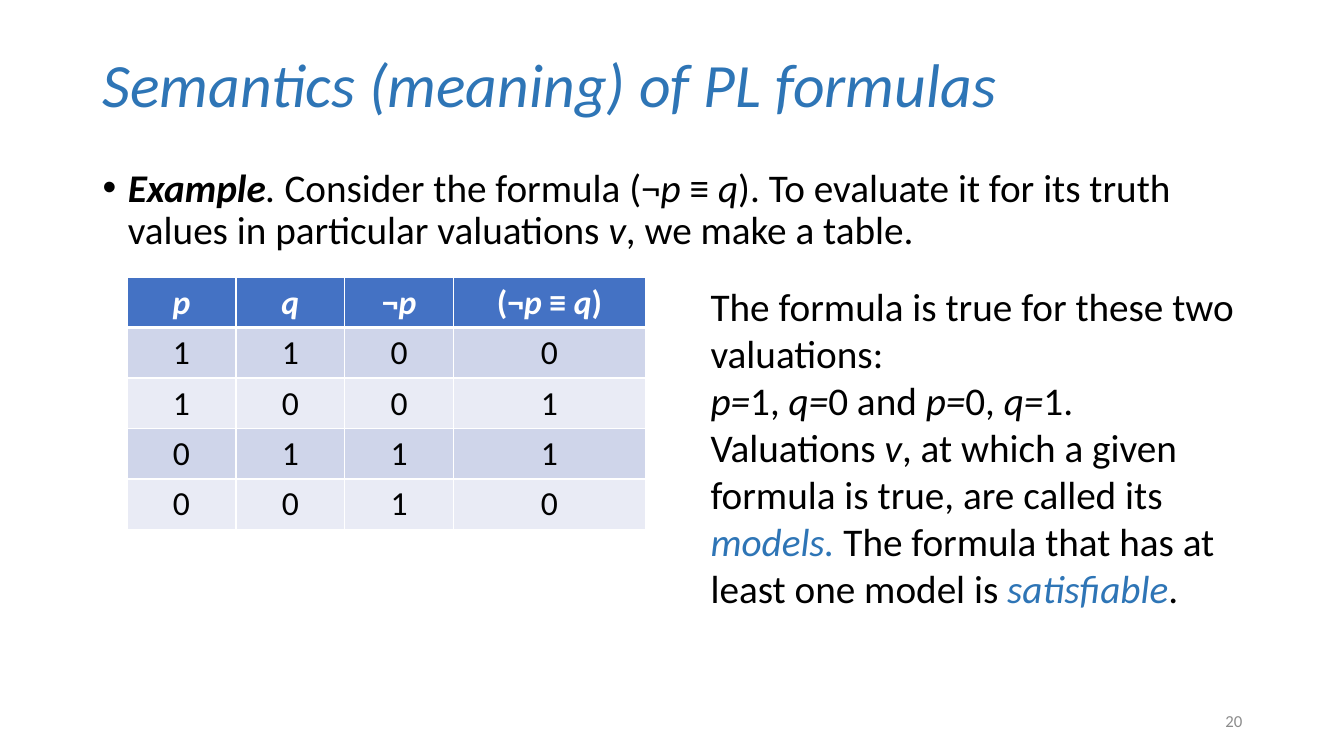
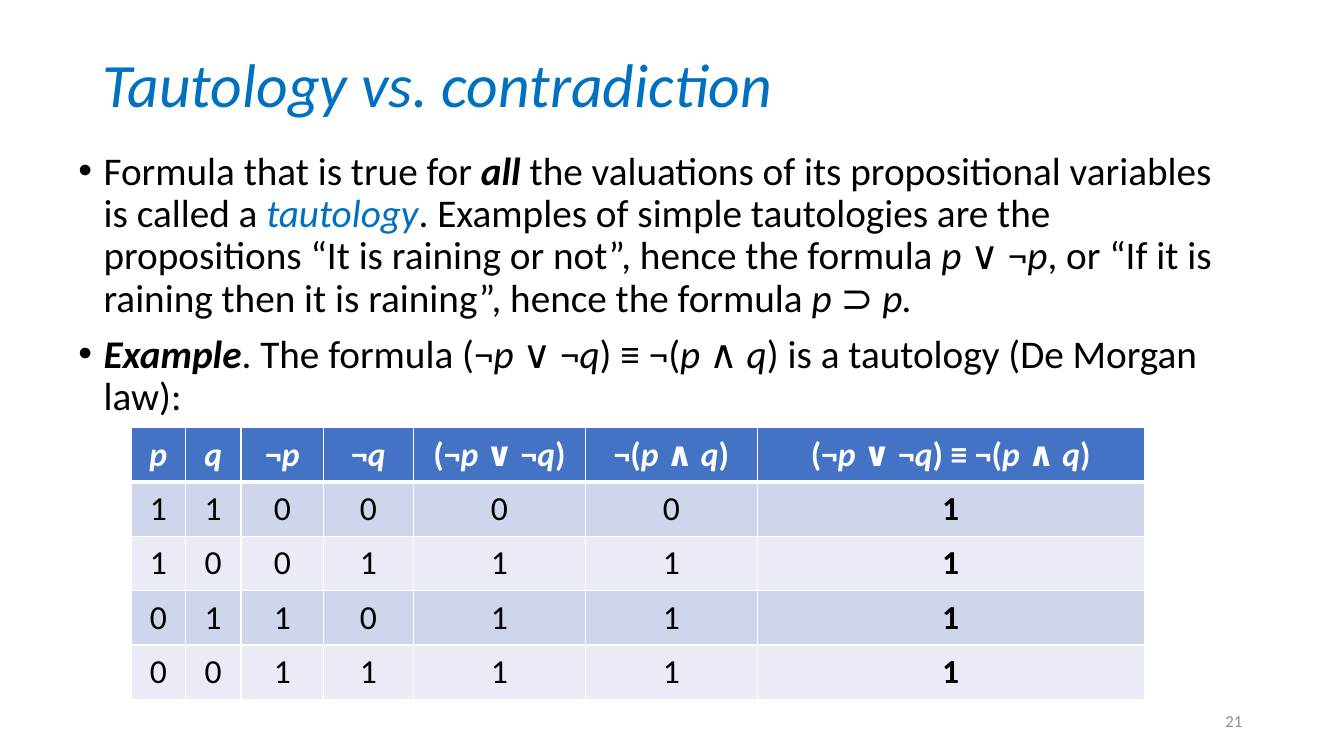
from dataclasses import dataclass

from lxml.etree import SubElement
from pptx import Presentation
from pptx.dml.color import RGBColor
from pptx.enum.text import MSO_ANCHOR, PP_ALIGN
from pptx.oxml.ns import qn
from pptx.util import Inches, Pt


@dataclass(frozen=True)
class Theme:
    font: str = "Calibri"
    text: str = "000000"
    white: str = "FFFFFF"
    muted: str = "8C8C8C"
    header: str = "4472C4"
    bands: tuple = ("CFD5EA", "E9EBF5")
    title_size: int = 44
    body_size: int = 28
    table_size: int = 24
    number_size: int = 12
    line_spacing: float = 0.9
    paragraph_gap: int = 10
    indent: float = 0.25
    border: int = 1
    header_border: int = 3


THEME = Theme()
TITLE_AREA = (0.92, 0.4, 11.5, 0.94)
NUMBER_AREA = (9.42, 6.95, 3, 0.4)

# Inline marks: _italic_, *bold*, ^accent colour^
PAGES = [
    {
        "title": "Semantics (meaning) of PL formulas",
        "number": "20",
        "accent": "2E75B6",
        "bullets": [
            "_*Example*. _Consider the formula (¬_p _≡ _q_). To evaluate it for its truth "
            "values in particular valuations _v_, we make a table.",
        ],
        "bullet_area": (0.92, 1.62, 11.5, 5.14),
        "table": {
            "header": ["_p_", "_q_", "¬_p_", "(¬_p _≡ _q_)"],
            "rows": ["1100", "1001", "0111", "0010"],
            "left": 1.26, "top": 2.75, "row_height": 0.5,
            "widths": [1.08, 1.08, 1.08, 1.9],
            "bold_columns": [],
        },
        "comment": [
            "The formula is true for these two valuations:",
            "_p=_1, _q=_0 and _p=_0, _q=_1.",
            "Valuations _v_, at which a given formula is true, are called its "
            "_^models. ^_The formula that has at least one model is _^satisfiable^_.",
        ],
        "comment_area": (6.95, 2.75, 5.46, 3.4),
    },
    {
        "title": "Tautology vs. contradiction",
        "number": "21",
        "accent": "0070C0",
        "bullets": [
            "Formula that is true for _*all*_ the valuations of its propositional variables "
            "is called a _^tautology^_. Examples of simple tautologies are the propositions "
            "“It is raining or not”, hence the formula _p _∨ ¬_p_, or “If it is raining "
            "then it is raining”, hence the formula _p _⊃ _p._",
            "_*Example*_. The formula (¬_p _∨ ¬_q_) ≡ ¬(_p _∧ _q_) is a tautology "
            "(De Morgan law):",
        ],
        "bullet_area": (0.68, 1.45, 11.74, 5.78),
        "table": {
            "header": ["_p_", "_q_", "¬_p_", "¬_q_", "(¬_p _∨ ¬_q_)", "¬(_p _∧ _q_)",
                       "(¬_p _∨ ¬_q_) ≡ ¬(_p _∧ _q_)"],
            "rows": ["1100001", "1001111", "0110111", "0011111"],
            "left": 1.3, "top": 4.24, "row_height": 0.54,
            "widths": [0.54, 0.55, 0.82, 0.89, 1.71, 1.7, 3.84],
            "bold_columns": [6],
        },
    },
]


def split_marks(text):
    """Yield (piece, active marks) for a marked-up string."""
    active, piece = set(), ""
    for letter in text:
        if letter not in "_*^":
            piece += letter
            continue
        if piece:
            yield piece, frozenset(active)
        piece = ""
        active ^= {letter}
    if piece:
        yield piece, frozenset(active)


def set_bullet(para):
    properties = para._p.get_or_add_pPr()
    properties.set("marL", str(Inches(THEME.indent)))
    properties.set("indent", str(-Inches(THEME.indent)))
    SubElement(properties, qn("a:buFont")).set("typeface", "Arial")
    SubElement(properties, qn("a:buChar")).set("char", "•")


def write(frame, paragraphs, size=THEME.body_size, color=THEME.text, accent=THEME.text,
          bold=False, italic=False, align=PP_ALIGN.LEFT, anchor=MSO_ANCHOR.TOP,
          line_spacing=None, space_before=0, bullet=False):
    frame.word_wrap = True
    frame.vertical_anchor = anchor
    for index, text in enumerate(paragraphs):
        para = frame.add_paragraph() if index else frame.paragraphs[0]
        para.alignment = align
        para.space_before = Pt(space_before)
        if line_spacing:
            para.line_spacing = line_spacing
        if bullet:
            set_bullet(para)
        for piece, marks in split_marks(text):
            span = para.add_run()
            span.text = piece
            span.font.name = THEME.font
            span.font.size = Pt(size)
            span.font.bold = bold or "*" in marks
            span.font.italic = italic or "_" in marks
            span.font.color.rgb = RGBColor.from_string(accent if "^" in marks else color)


def add_text(page, area, paragraphs, **text_format):
    box = page.shapes.add_textbox(*map(Inches, area))
    write(box.text_frame, paragraphs, **text_format)


def style_cell(cell, fill, top, bottom):
    """Draw white borders (widths in points) and fill the cell."""
    properties = cell._tc.get_or_add_tcPr()
    widths = {"a:lnL": THEME.border, "a:lnR": THEME.border, "a:lnT": top, "a:lnB": bottom}
    for tag, width in widths.items():
        line = SubElement(properties, qn(tag))
        line.set("w", str(Pt(width)))
        solid = SubElement(line, qn("a:solidFill"))
        SubElement(solid, qn("a:srgbClr")).set("val", THEME.white)
    cell.fill.solid()
    cell.fill.fore_color.rgb = RGBColor.from_string(fill)


def add_truth_table(page, content):
    rows = [content["header"], *content["rows"]]
    widths, row_height = content["widths"], content["row_height"]
    area = (content["left"], content["top"], sum(widths), row_height * len(rows))
    table = page.shapes.add_table(len(rows), len(widths), *map(Inches, area)).table
    for column, width in zip(table.columns, widths):
        column.width = Inches(width)
    for row_index, values in enumerate(rows):
        table.rows[row_index].height = Inches(row_height)
        is_header = row_index == 0
        fill = THEME.header if is_header else THEME.bands[(row_index - 1) % 2]
        top = THEME.header_border if row_index == 1 else THEME.border
        bottom = THEME.header_border if is_header else THEME.border
        for column_index, value in enumerate(values):
            cell = table.cell(row_index, column_index)
            style_cell(cell, fill, top, bottom)
            write(cell.text_frame, [value], size=THEME.table_size, align=PP_ALIGN.CENTER,
                  color=THEME.white if is_header else THEME.text,
                  bold=is_header or column_index in content["bold_columns"])
            cell.vertical_anchor = MSO_ANCHOR.MIDDLE


def add_page(deck, content):
    page = deck.slides.add_slide(deck.slide_layouts[6])
    accent = content["accent"]
    add_text(page, TITLE_AREA, [content["title"]], size=THEME.title_size, color=accent,
             italic=True, anchor=MSO_ANCHOR.MIDDLE, line_spacing=THEME.line_spacing)
    add_text(page, content["bullet_area"], content["bullets"], accent=accent, bullet=True,
             line_spacing=THEME.line_spacing, space_before=THEME.paragraph_gap)
    add_text(page, NUMBER_AREA, [content["number"]], size=THEME.number_size,
             color=THEME.muted, align=PP_ALIGN.RIGHT, anchor=MSO_ANCHOR.MIDDLE)
    add_truth_table(page, content["table"])
    if "comment" in content:
        add_text(page, content["comment_area"], content["comment"], accent=accent)


def main():
    deck = Presentation()
    deck.slide_width, deck.slide_height = Inches(13.33), Inches(7.5)
    for content in PAGES:
        add_page(deck, content)
    deck.save("out.pptx")


if __name__ == "__main__":
    main()
